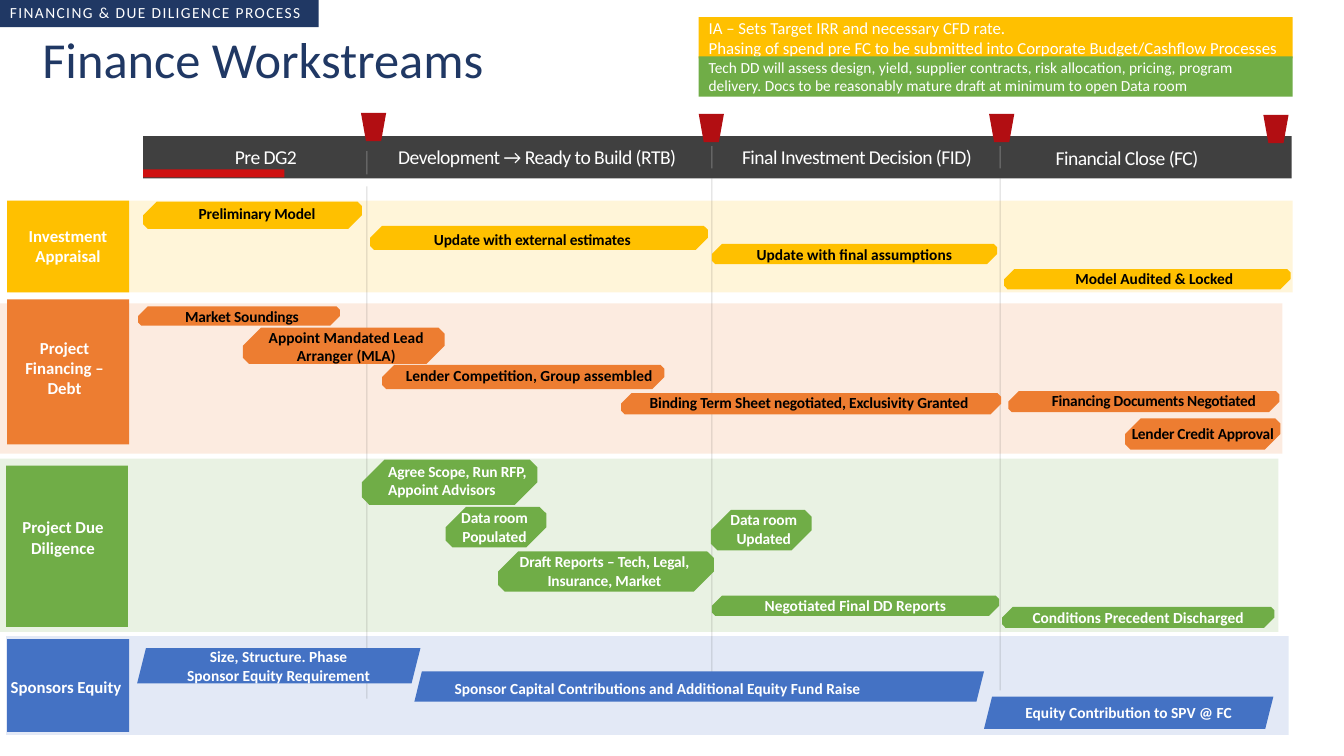
from lxml import etree
from pptx import Presentation
from pptx import util as u
from pptx.dml.color import RGBColor
from pptx.enum import shapes, text
from pptx.oxml.ns import qn

COLOURS = {
    "yellow": "FFC000", "orange": "ED7D31", "green": "70AD47", "blue": "4472C4",
    "navy": "203864", "charcoal": "404040", "red": "FF0000", "crimson": "B20E12",
    "white": "FFFFFF", "black": "000000",
}
KINDS = shapes.MSO_SHAPE
LEFT, CENTER, RIGHT = text.PP_ALIGN.LEFT, text.PP_ALIGN.CENTER, text.PP_ALIGN.RIGHT
TOP, MIDDLE = text.MSO_ANCHOR.TOP, text.MSO_ANCHOR.MIDDLE

deck = Presentation()
deck.slide_width, deck.slide_height = u.Inches(13.33), u.Inches(7.5)
page = deck.slides.add_slide(deck.slide_layouts[5])
translucent = []  # (shape, opacity in percent)


def add_block(kind, place, colour):
    block = page.shapes.add_shape(kind, *map(u.Inches, place))
    block.shadow.inherit = False
    block.fill.solid()
    block.fill.fore_color.rgb = RGBColor.from_string(COLOURS[colour])
    block.line.fill.background()
    return block


def write(box, words, size=11, colour="white", bold=False, align=LEFT,
          anchor=MIDDLE, spacing=0, inset=True, line_spacing=None):
    """Fill a shape with text, one paragraph per line; spacing is in points."""
    frame = box.text_frame
    frame.word_wrap = True
    frame.auto_size = text.MSO_AUTO_SIZE.NONE
    frame.vertical_anchor = anchor
    frame.margin_left = frame.margin_right = u.Inches(0.1 if inset else 0)
    frame.margin_top = frame.margin_bottom = u.Inches(0.05 if inset else 0)
    for index, line in enumerate(words.split("\n")):
        para = frame.add_paragraph() if index else frame.paragraphs[0]
        para.alignment = align
        para.line_spacing = line_spacing
        span = para.add_run()
        span.text = line
        span.font.name, span.font.size, span.font.bold = "Calibri", u.Pt(size), bold
        span.font.color.rgb = RGBColor.from_string(COLOURS[colour])
        if spacing:
            span.font._element.set("spc", str(round(spacing * 100)))


# Title and banner
title = page.shapes.title
title.left, title.top, title.width, title.height = map(u.Inches, (0.32, 0.23, 8.15, 0.71))
write(title, "Finance Workstreams", size=36, colour="navy", anchor=TOP)
banner = add_block(KINDS.RECTANGLE, (0, 0, 3.16, 0.27), "navy")
write(banner, "FINANCING & DUE DILIGENCE PROCESS", anchor=TOP, spacing=1, line_spacing=0.9)

# Lanes: colour, band, heading block, heading text place, heading
lanes = [
    ("orange", (0, 3.01, 12.72, 1.49), (0.07, 2.97, 1.21, 1.44),
     (0.15, 3.33, 0.98, 0.64), "Project Financing – Debt"),
    ("blue", (0.06, 6.31, 12.72, 0.98), (0.07, 6.34, 1.21, 0.92),
     (0.05, 6.4, 1.21, 0.82), "Sponsors Equity"),
    ("green", (-0.04, 4.55, 12.72, 1.72), (0.06, 4.62, 1.21, 1.6),
     (0.02, 4.94, 1.21, 0.78), "Project Due Diligence"),
    ("yellow", (0.1, 1.99, 12.72, 0.91), (0.07, 1.99, 1.21, 0.91),
     (0.07, 2.34, 1.21, 0.2), "Investment Appraisal"),
]
for colour, band, block, place, heading in lanes:
    translucent.append((add_block(KINDS.RECTANGLE, band, colour), 15))
    add_block(KINDS.RECTANGLE, block, colour)
    box = page.shapes.add_textbox(*map(u.Inches, place))
    write(box, heading, size=12, bold=True, align=CENTER, inset=False)

# Phase header
add_block(KINDS.RECTANGLE, (1.42, 1.35, 11.39, 0.42), "charcoal")
translucent.append((add_block(KINDS.RECTANGLE, (1.42, 1.68, 1.4, 0.08), "red"), 75))
phases = [
    (2.33, 1.43, "Pre DG2"),
    (3.95, 1.43, "Development → Ready to Build (RTB)"),
    (7.36, 1.43, "Final Investment Decision (FID)"),
    (10.47, 1.44, "Financial Close (FC)"),
]
for left, top, phase in phases:
    box = page.shapes.add_textbox(*map(u.Inches, (left, top, 3.2, 0.24)))
    write(box, phase, size=14, spacing=-0.4, inset=False)

# Phase dividers: x, then top and bottom in the header and in the lanes
dividers = [(3.64, 1.5, 1.73, 1.85, 6.93), (7.06, 1.45, 1.67, 1.77, 6.85),
            (9.92, 1.45, 1.67, 1.77, 6.85)]
for x, head_top, head_bottom, lane_top, lane_bottom in dividers:
    for top, bottom, colour, opacity in [(head_top, head_bottom, "white", 30),
                                         (lane_top, lane_bottom, "black", 15)]:
        divider = page.shapes.add_connector(
            shapes.MSO_CONNECTOR.STRAIGHT, *map(u.Inches, (x, top, x, bottom)))
        divider.line.width = u.Pt(0.75)
        divider.line.color.rgb = RGBColor.from_string(COLOURS[colour])
        etree.SubElement(divider._element.spPr, qn("a:effectLst"))
        translucent.append((divider, opacity))

for left, top in [(3.58, 1.12), (6.93, 1.13), (9.81, 1.13), (12.53, 1.14)]:
    add_block(KINDS.FLOWCHART_MANUAL_OPERATION, (left, top, 0.25, 0.28), "crimson")

# Activities: bar, place of the label (None: inside the bar), label, spacing, alignment
activities = {
    "yellow": [
        ((1.42, 2, 2.17, 0.27), (1.83, 2.02, 1.44, 0.19), "Preliminary Model", -0.1, CENTER),
        ((3.67, 2.24, 3.35, 0.24), (4.16, 2.29, 2.24, 0.16),
         "Update with external estimates", -0.1, CENTER),
        ((7.06, 2.42, 2.83, 0.2), None, "Update with final assumptions", 0, CENTER),
        ((9.96, 2.67, 2.84, 0.2), (10.55, 2.67, 1.8, 0.18), "Model Audited & Locked", 0, CENTER),
    ],
    "orange": [
        ((1.37, 3.04, 2, 0.19), (1.74, 3.04, 1.32, 0.19), "Market Soundings", -0.1, CENTER),
        ((2.41, 3.25, 2, 0.36), (2.4, 3.25, 2.07, 0.37),
         "Appoint Mandated Lead Arranger (MLA)", 0, CENTER),
        ((3.79, 3.62, 2.8, 0.24), (4, 3.63, 2.5, 0.19),
         "Lender Competition, Group assembled", 0, CENTER),
        ((6.16, 3.9, 3.77, 0.21), (6.22, 3.87, 3.61, 0.24),
         "Binding Term Sheet negotiated, Exclusivity Granted", -0.1, CENTER),
        ((10, 3.88, 2.69, 0.21), (10.23, 3.88, 2.43, 0.19),
         "Financing Documents Negotiated", -0.2, CENTER),
        ((11.16, 4.15, 1.54, 0.31), (11.21, 4.2, 1.44, 0.19),
         "Lender Credit Approval", -0.2, CENTER),
    ],
    "green": [
        ((3.59, 4.56, 1.74, 0.45), (3.85, 4.58, 1.42, 0.37),
         "Agree Scope, Run RFP, Appoint Advisors", -0.1, LEFT),
        ((4.42, 5.03, 1, 0.4), (4.49, 5.04, 0.83, 0.37), "Data room Populated", -0.1, CENTER),
        ((4.94, 5.47, 2.14, 0.4), (4.99, 5.48, 2.01, 0.37),
         "Draft Reports – Tech, Legal, Insurance, Market", -0.1, CENTER),
        ((7.05, 5.06, 1, 0.4), (7.2, 5.06, 0.75, 0.37), "Data room Updated", -0.1, CENTER),
        ((7.06, 5.91, 2.85, 0.2), None, "Negotiated Final DD Reports", 0, CENTER),
        ((9.94, 6.02, 2.7, 0.21), None, "Conditions Precedent Discharged", 0, CENTER),
    ],
    "blue": [
        ((1.36, 6.43, 2.81, 0.35), None,
         "Size, Structure. Phase\nSponsor Equity Requirement", 0, CENTER),
        ((4.11, 6.66, 5.65, 0.3), (4.34, 6.73, 4.2, 0.19),
         "Sponsor Capital Contributions and Additional Equity Fund Raise", 0, RIGHT),
        ((9.76, 6.91, 2.87, 0.32), None, "Equity Contribution to SPV @ FC", 0, CENTER),
    ],
}
for colour, bars in activities.items():
    kind = KINDS.PARALLELOGRAM if colour == "blue" else KINDS.SNIP_2_DIAG_RECTANGLE
    ink = "black" if colour in ("yellow", "orange") else "white"
    for place, label_place, label, spacing, align in bars:
        box = add_block(kind, place, colour)
        if colour != "blue":
            box.adjustments[0], box.adjustments[1] = 1, 0.167
        if label_place:
            box = page.shapes.add_textbox(*map(u.Inches, label_place))
        write(box, label, colour=ink, bold=True, align=align, spacing=spacing,
              inset=label_place is None)

# Notes at top right
notes = [
    ((6.93, 0.17, 5.89, 0.41), "yellow", 12,
     "IA – Sets Target IRR and necessary CFD rate.\n"
     "Phasing of spend pre FC to be submitted into Corporate Budget/Cashflow Processes"),
    ((6.93, 0.56, 5.89, 0.4), "green", 11,
     "Tech DD will assess design, yield, supplier contracts, risk allocation, pricing, program "
     "delivery. Docs to be reasonably mature draft at minimum to open Data room"),
]
for place, colour, size, words in notes:
    write(add_block(KINDS.RECTANGLE, place, colour), words, size=size)

for shape, opacity in translucent:
    tint = shape._element.spPr.find(".//" + qn("a:srgbClr"))
    etree.SubElement(tint, qn("a:alpha"), val=str(opacity * 1000))

deck.save("out.pptx")
